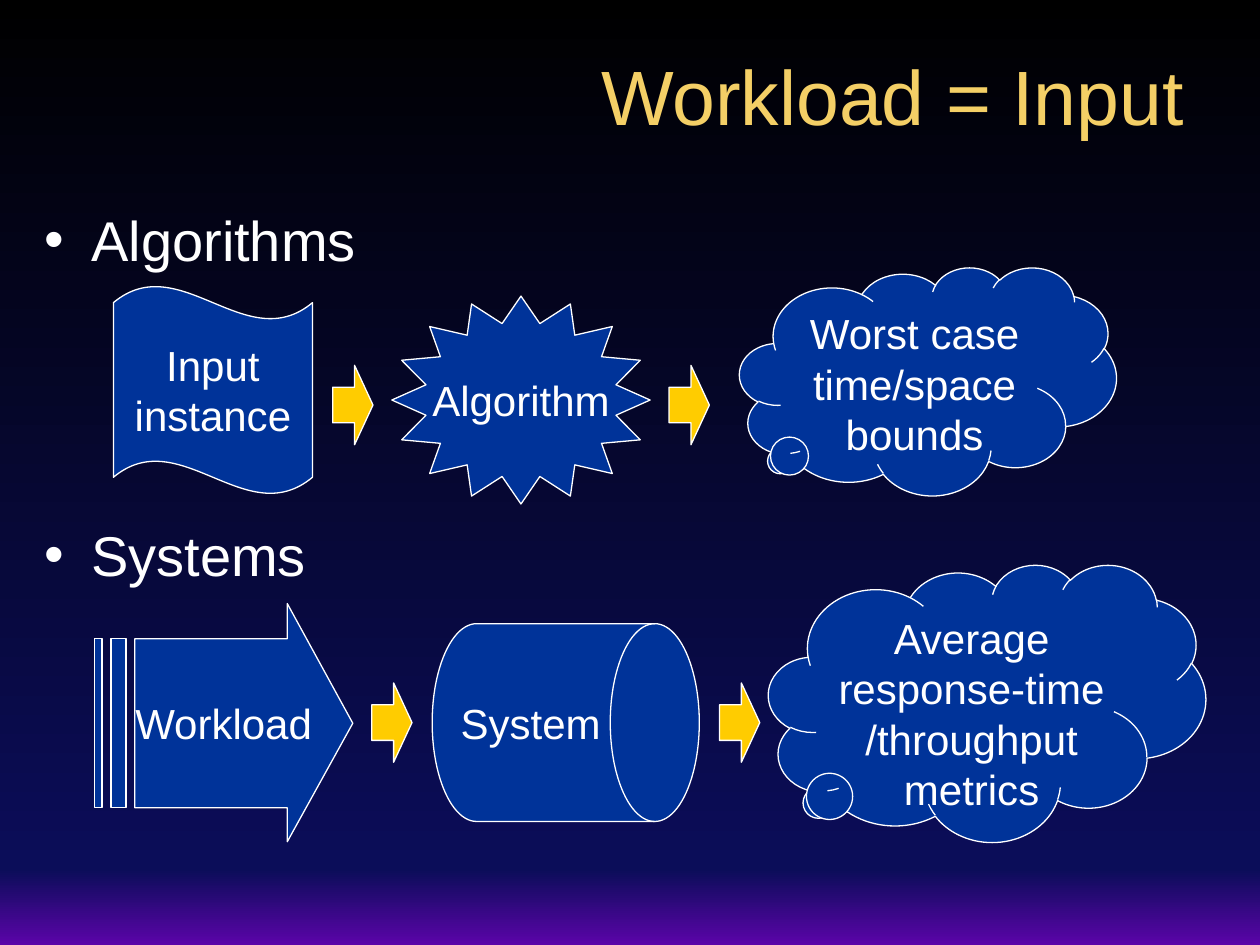
from copy import deepcopy

from pptx import Presentation
from pptx import util as u
from pptx.dml.color import RGBColor
from pptx.enum import shapes, text
from pptx.oxml.ns import qn

Inches, Pt = u.Inches, u.Pt
SHAPE = shapes.MSO_SHAPE
COLORS = {
    "title": "F4CF66", "text": "FFFFFF", "box": "003399", "arrow": "FFCC00",
    "top": "000000", "middle": "0B0D59", "bottom": "5A04A8",
}


def color(name):
    return RGBColor.from_string(COLORS[name])


def format_shape(shape, label="", wrap=False, fill="box"):
    """Fill and outline a shape and centre its label."""
    shape.shadow.inherit = False
    shape.fill.solid()
    shape.fill.fore_color.rgb = color(fill)
    shape.line.color.rgb = color("text")
    shape.line.width = Pt(0.75)
    if not label:
        return
    frame = shape.text_frame
    frame.text = label
    frame.word_wrap = wrap
    frame.vertical_anchor = text.MSO_ANCHOR.TOP if wrap else text.MSO_ANCHOR.MIDDLE
    for paragraph in frame.paragraphs:
        paragraph.alignment = text.PP_ALIGN.CENTER
        for run in paragraph.runs:
            run.font.name = "Arial"
            run.font.size = Pt(24)
            run.font.color.rgb = color("text")


presentation = Presentation()
presentation.slide_width, presentation.slide_height = Inches(10), Inches(7.5)
slide = presentation.slides.add_slide(presentation.slide_layouts[1])

# Background: three-stop vertical gradient
background = slide.background.fill
background.gradient()
background.gradient_angle = 270
stop_list = next(slide.element.iter(qn("a:gsLst")))
stop_list.append(deepcopy(stop_list[-1]))
stops = [("top", 0), ("middle", 0.92), ("bottom", 1)]
for stop, (name, position) in zip(background.gradient_stops, stops):
    stop.color.rgb = color(name)
    stop.position = position

# Title and list
title, body = slide.shapes.title, slide.placeholders[1]
title.text_frame.text = "Workload = Input"
title.text_frame.vertical_anchor = text.MSO_ANCHOR.MIDDLE
title.text_frame.paragraphs[0].alignment = text.PP_ALIGN.RIGHT
body.text_frame.text = "Algorithms\nSystems"
for paragraph, space in zip(body.text_frame.paragraphs, (4, 141.5)):
    paragraph.space_before = Pt(space)
for placeholder, box, size, name in [
    (title, (0.5, 0.25, 9, 1), 44, "title"),
    (body, (0.25, 1.58, 9.58, 5.75), 32, "text"),
]:
    placeholder.left, placeholder.top, placeholder.width, placeholder.height = map(Inches, box)
    placeholder.text_frame.auto_size = text.MSO_AUTO_SIZE.NONE
    for paragraph in placeholder.text_frame.paragraphs:
        font = paragraph.runs[0].font
        font.name, font.size = "Arial", Pt(size)
        font.color.rgb = color(name)

# Preset shapes of both flows: kind, box, adjustments, label, wrap
algorithm_flow = [
    (SHAPE.WAVE, (0.9, 2.27, 1.58, 1.65), (0.08, 0), "Input\ninstance", False),
    (SHAPE.STAR_16_POINT, (3.11, 2.35, 2.05, 1.65), (0.375,), "Algorithm", False),
    (SHAPE.CLOUD_CALLOUT, (5.87, 2.12, 2.99, 1.81), (-0.387, 0.346),
     "Worst case time/space\nbounds", True),
]
system_flow = [
    (SHAPE.FLOWCHART_DIRECT_ACCESS_STORAGE, (3.43, 4.95, 2.12, 1.57), (), "System", False),
    (SHAPE.CLOUD_CALLOUT, (6.1, 4.48, 3.47, 2.2), (-0.381, 0.356),
     "Average response-time /throughput metrics", True),
]
algorithm_group = slide.shapes.add_group_shape()
system_group = slide.shapes.add_group_shape()

# Striped workload arrow: head with body, then two stripes
outlines = [
    [(2.28, 4.79), (2.28, 5.07), (1.07, 5.07), (1.07, 6.41), (2.28, 6.41), (2.28, 6.68), (2.8, 5.74)],
    [(0.88, 5.07), (0.88, 6.41), (1, 6.41), (1, 5.07)],
    [(0.75, 5.07), (0.75, 6.41), (0.81, 6.41), (0.81, 5.07)],
]
builder = system_group.shapes.build_freeform()
for outline in outlines:
    points = [(Inches(x), Inches(y)) for x, y in outline]
    builder.move_to(*points[0])
    builder.add_line_segments(points[1:], close=True)
# The builder opens at its start point, so it is set to the first corner
start_x, start_y = (Inches(value) for value in outlines[0][0])
builder = system_group.shapes.build_freeform(start_x, start_y)
for index, outline in enumerate(outlines):
    points = [(Inches(x), Inches(y)) for x, y in outline]
    if index:
        builder.move_to(*points[0])
    builder.add_line_segments(points[1:], close=True)
format_shape(builder.convert_to_shape(), "Workload")

# Flow shapes and the yellow arrows between them
for group, flow, arrow_lefts, arrow_top in [
    (algorithm_group, algorithm_flow, (2.64, 5.31), 2.9),
    (system_group, system_flow, (2.95, 5.71), 5.42),
]:
    for left in arrow_lefts:
        arrow = group.shapes.add_shape(
            SHAPE.RIGHT_ARROW, Inches(left), Inches(arrow_top), Inches(0.32), Inches(0.63))
        arrow.adjustments[0], arrow.adjustments[1] = 0.449, 0.456
        format_shape(arrow, fill="arrow")
    for kind, box, adjustments, label, wrap in flow:
        shape = group.shapes.add_shape(kind, *map(Inches, box))
        for index, value in enumerate(adjustments):
            shape.adjustments[index] = value
        format_shape(shape, label, wrap)
        if label == "System":
            shape.text_frame.margin_right = Inches(0.3)
        if label.startswith("Average"):
            shape.text_frame.margin_left = shape.text_frame.margin_right = Inches(0.04)

presentation.save("out.pptx")
